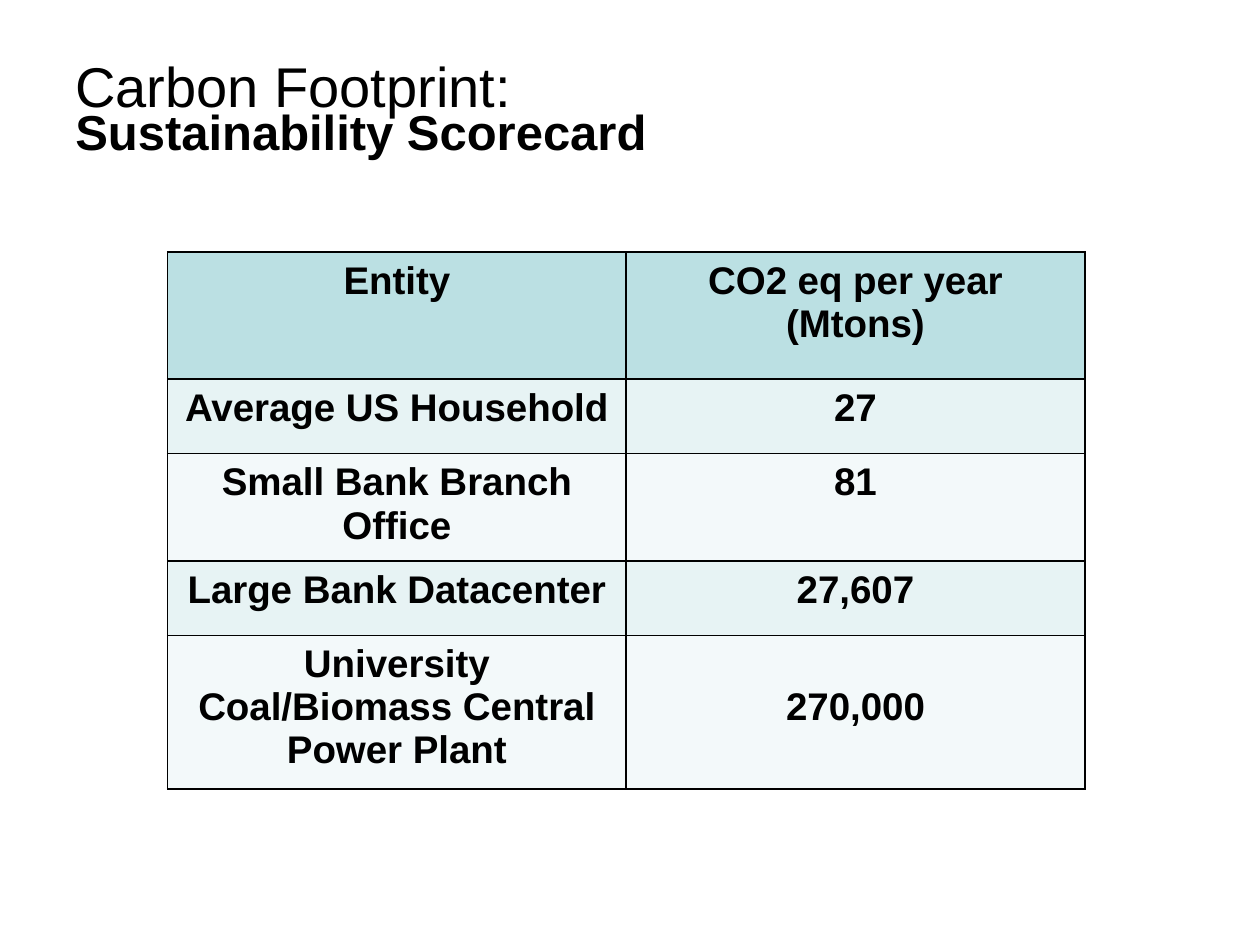
import pptx
import pptx.util
import pptx.dml.color
import pptx.enum.text
import pptx.oxml
import pptx.oxml.ns

Inches = pptx.util.Inches
Pt = pptx.util.Pt
MIDDLE = pptx.enum.text.MSO_ANCHOR.MIDDLE
TOP = pptx.enum.text.MSO_ANCHOR.TOP
CENTER = pptx.enum.text.PP_ALIGN.CENTER

COLOURS = {
    "text": "000000",
    "border": "000000",
    "header": "BBE0E3",
    "odd": "E7F3F4",
    "even": "F3F9FA",
}


def colour(name):
    return pptx.dml.color.RGBColor.from_string(COLOURS[name])


def write(paragraph, text, size, bold):
    span = paragraph.add_run()
    span.text = text
    font_format = {"name": "Arial", "size": Pt(size), "bold": bold}
    for attribute, value in font_format.items():
        setattr(span.font, attribute, value)
    span.font.color.rgb = colour("text")


deck = pptx.Presentation()
deck.slide_width = Inches(10)
deck.slide_height = Inches(7.5)
page = deck.slides.add_slide(deck.slide_layouts[6])

# Heading: text, top, height, size, bold, anchor, top margin
headings = [
    ("Carbon Footprint:", 0.3, 1.25, 32, False, TOP, 0.11),
    ("Sustainability Scorecard", 0.75, 0.58, 28, True, MIDDLE, 0.05),
]
for text, top, height, size, bold, anchor, margin in headings:
    box = page.shapes.add_textbox(Inches(0.5), Inches(top), Inches(9), Inches(height))
    frame_format = {
        "word_wrap": True,
        "vertical_anchor": anchor,
        "margin_top": Inches(margin),
    }
    for attribute, value in frame_format.items():
        setattr(box.text_frame, attribute, value)
    write(box.text_frame.paragraphs[0], text, size, bold)

# Scorecard table
rows = [
    ("Entity", "CO2 eq per year\n(Mtons)"),
    ("Average US Household", "27"),
    ("Small Bank Branch Office", "81"),
    ("Large Bank Datacenter", "27,607"),
    ("University Coal/Biomass Central Power Plant", "270,000"),
]
row_heights = [1.01, 0.59, 0.85, 0.59, 1.22]
column_width = 3.64
scorecard = page.shapes.add_table(
    len(rows), 2, Inches(1.33), Inches(2),
    Inches(2 * column_width), Inches(sum(row_heights)),
).table
for column in scorecard.columns:
    column.width = Inches(column_width)

for row_index, (texts, height) in enumerate(zip(rows, row_heights)):
    scorecard.rows[row_index].height = Inches(height)
    fill_name = "header" if row_index == 0 else ("even", "odd")[row_index % 2]
    for column_index, text in enumerate(texts):
        cell = scorecard.cell(row_index, column_index)
        # The power plant value sits on the second line of its row
        lowered = text == "270,000"
        cell_format = {
            "margin_left": Inches(0.11),
            "margin_right": Inches(0.11),
            "margin_top": Inches(0.4 if lowered else 0.06),
            "margin_bottom": Inches(0.06),
            "vertical_anchor": TOP,
        }
        for attribute, value in cell_format.items():
            setattr(cell, attribute, value)

        for line_index, line in enumerate(text.split("\n")):
            frame = cell.text_frame
            para = frame.add_paragraph() if line_index else frame.paragraphs[0]
            para.alignment = CENTER
            write(para, line, 22, True)

        # Borders come before the fill in the cell properties
        properties = cell._tc.get_or_add_tcPr()
        for side in ("lnL", "lnR", "lnT", "lnB"):
            properties.append(pptx.oxml.parse_xml(
                f'<a:{side} {pptx.oxml.ns.nsdecls("a")} w="{Pt(1)}"><a:solidFill>'
                f'<a:srgbClr val="{COLOURS["border"]}"/></a:solidFill></a:{side}>'
            ))
        cell.fill.solid()
        cell.fill.fore_color.rgb = colour(fill_name)

deck.save("out.pptx")
